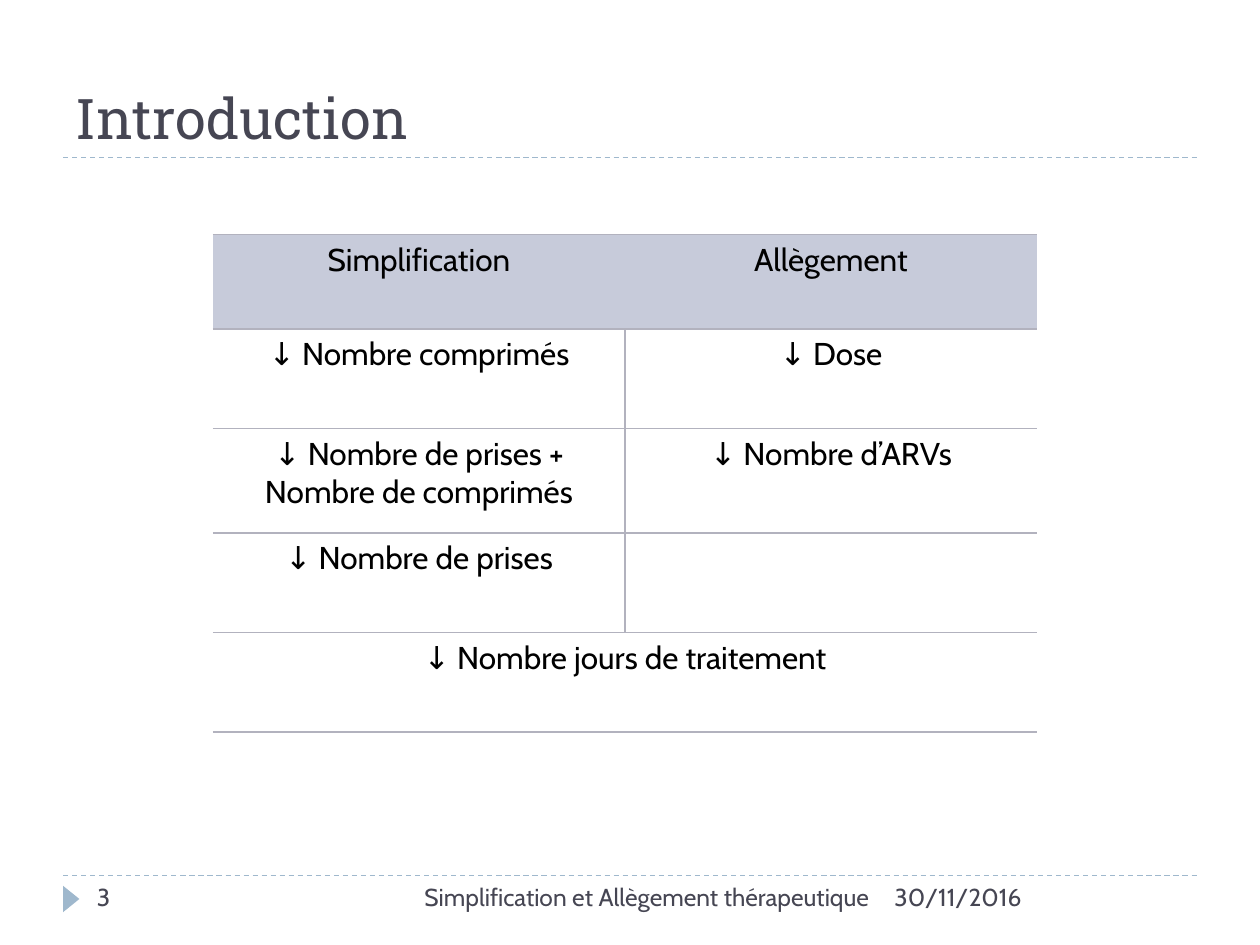
from dataclasses import dataclass

from lxml.etree import SubElement
from pptx import Presentation
from pptx.dml.color import RGBColor
from pptx.enum.dml import MSO_LINE
from pptx.enum.shapes import MSO_CONNECTOR, MSO_SHAPE
from pptx.enum.text import MSO_ANCHOR, PP_ALIGN
from pptx.oxml.ns import qn
from pptx.util import Inches, Pt

TITLE = "Introduction"
ROWS = [
    ("Simplification", "Allègement"),
    ("↓ Nombre comprimés", "↓ Dose"),
    ("↓ Nombre de prises + Nombre de comprimés", "↓ Nombre d’ARVs"),
    ("↓ Nombre de prises", ""),
    ("↓ Nombre jours de traitement", ""),  # spans both columns
]
ROW_HEIGHTS = [0.75, 0.79, 0.83, 0.79, 0.79]
# text, left, width, alignment
FOOTER = [
    ("30/11/2016", 7, 2.5, PP_ALIGN.LEFT),
    ("Simplification et Allègement thérapeutique", 3.17, 3.83, PP_ALIGN.RIGHT),
    ("3", 0.67, 2.17, PP_ALIGN.LEFT),
]


@dataclass(frozen=True)
class Theme:
    heading_font: str = "Roboto Slab"
    body_font: str = "Cabin"
    title_size: int = 32
    table_size: int = 18
    footer_size: int = 14
    ink: str = "464653"
    black: str = "000000"
    accent: str = "9FB8CD"
    header: str = "C7CBDA"
    border: str = "B2B2BE"


THEME = Theme()
WIDTH, HEIGHT, MARGIN = 10, 7.5, 0.5
TITLE_RULE, FOOTER_RULE = 1.25, 6.95
TABLE_LEFT, TABLE_TOP, COLUMN_WIDTH = 1.69, 1.86, 3.27
NO_STYLE = "{2D5ABB26-0587-4C30-8999-92F81FD0307C}"


def style(paragraph, font_name, size, color, alignment=PP_ALIGN.LEFT):
    paragraph.alignment = alignment
    paragraph.font.name = font_name
    paragraph.font.size = Pt(size)
    paragraph.font.color.rgb = RGBColor.from_string(color)


def add_rule(slide, top):
    rule = slide.shapes.add_connector(
        MSO_CONNECTOR.STRAIGHT, Inches(MARGIN), Inches(top),
        Inches(WIDTH - MARGIN), Inches(top))
    rule.line.color.rgb = RGBColor.from_string(THEME.accent)
    rule.line.width = Pt(0.75)
    rule.line.dash_style = MSO_LINE.DASH
    SubElement(rule._element.spPr, qn("a:effectLst"))


def add_marker(slide):
    marker = slide.shapes.add_shape(
        MSO_SHAPE.ISOSCELES_TRIANGLE, Inches(0.46), Inches(7.07), Inches(0.21), Inches(0.13))
    marker.rotation = 90
    marker.shadow.inherit = False
    marker.fill.solid()
    marker.fill.fore_color.rgb = RGBColor.from_string(THEME.accent)
    marker.line.fill.background()


def add_title(slide):
    title = slide.shapes.title
    title.left, title.top = Inches(MARGIN), Inches(0.17)
    title.width, title.height = Inches(WIDTH - 2 * MARGIN), Inches(TITLE_RULE - 0.17)
    title.text_frame.text = TITLE
    title.text_frame.vertical_anchor = MSO_ANCHOR.BOTTOM
    style(title.text_frame.paragraphs[0], THEME.heading_font, THEME.title_size, THEME.ink)


def set_borders(cell, sides):
    """Draw the named sides, given in the schema's order: L, R, T, B."""
    properties = cell._tc.get_or_add_tcPr()
    for index, side in enumerate(sides):
        line = properties.makeelement(qn(f"a:ln{side}"), {"w": str(Pt(1))})
        fill = SubElement(line, qn("a:solidFill"))
        SubElement(fill, qn("a:srgbClr"), val=THEME.border)
        properties.insert(index, line)


def add_comparison_table(slide):
    columns = len(ROWS[0])
    frame = slide.shapes.add_table(
        len(ROWS), columns, Inches(TABLE_LEFT), Inches(TABLE_TOP),
        Inches(columns * COLUMN_WIDTH), Inches(sum(ROW_HEIGHTS)))
    table = frame.table
    table.horz_banding = False
    table._tbl.tblPr.find(qn("a:tableStyleId")).text = NO_STYLE
    for column in table.columns:
        column.width = Inches(COLUMN_WIDTH)
    last = len(ROWS) - 1
    table.cell(last, 0).merge(table.cell(last, columns - 1))
    for row, texts in enumerate(ROWS):
        table.rows[row].height = Inches(ROW_HEIGHTS[row])
        for column, text in enumerate(texts):
            cell = table.cell(row, column)
            cell.text = text
            style(cell.text_frame.paragraphs[0], THEME.body_font, THEME.table_size,
                  THEME.black, PP_ALIGN.CENTER)
            if row == 0:
                cell.fill.solid()
                cell.fill.fore_color.rgb = RGBColor.from_string(THEME.header)
            else:
                cell.fill.background()
            divider = ("R" if column == 0 else "L") if 0 < row < last else ""
            set_borders(cell, divider + "TB")


def add_footer(slide):
    for text, left, width, alignment in FOOTER:
        box = slide.shapes.add_textbox(
            Inches(left), Inches(FOOTER_RULE), Inches(width), Inches(0.4))
        box.text_frame.word_wrap = True
        box.text_frame.text = text
        style(box.text_frame.paragraphs[0], THEME.body_font, THEME.footer_size,
              THEME.ink, alignment)


def main():
    presentation = Presentation()
    presentation.slide_width, presentation.slide_height = Inches(WIDTH), Inches(HEIGHT)
    slide = presentation.slides.add_slide(presentation.slide_layouts[5])
    for top in (FOOTER_RULE, TITLE_RULE):
        add_rule(slide, top)
    add_marker(slide)
    add_title(slide)
    add_comparison_table(slide)
    add_footer(slide)
    presentation.save("out.pptx")


if __name__ == "__main__":
    main()
